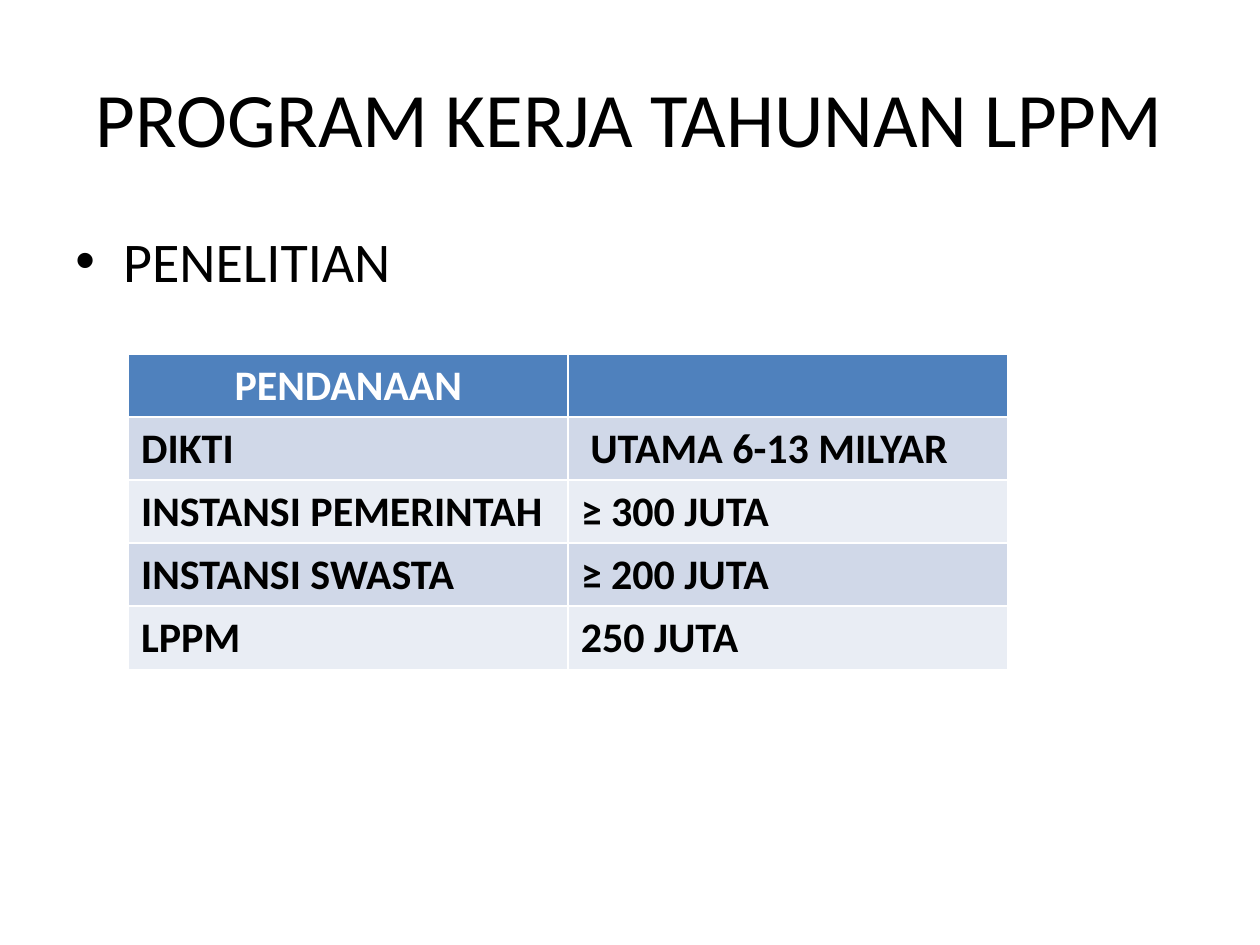
from dataclasses import dataclass

from lxml import etree
from pptx import Presentation
from pptx import util as u
from pptx.dml.color import RGBColor
from pptx.enum import text
from pptx.oxml import ns

BLACK = RGBColor(0x00, 0x00, 0x00)
WHITE = RGBColor(0xFF, 0xFF, 0xFF)
HEADER_BLUE = RGBColor(0x4F, 0x81, 0xBD)
BANDS = (RGBColor(0xD0, 0xD8, 0xE8), RGBColor(0xE9, 0xED, 0xF4))


@dataclass(frozen=True)
class Box:
    left: float
    top: float
    width: float
    height: float


@dataclass(frozen=True)
class Funding:
    source: str
    amount: str


TITLE_BOX = Box(0.5, 0.3, 9, 1.25)
BODY_BOX = Box(0.5, 1.75, 9, 4.95)
TABLE_BOX = Box(1.02, 2.81, 6.98, 2.5)

FUNDINGS = (
    Funding("PENDANAAN", ""),
    Funding("DIKTI", " UTAMA 6-13 MILYAR"),
    Funding("INSTANSI PEMERINTAH", "≥ 300 JUTA"),
    Funding("INSTANSI SWASTA", "≥ 200 JUTA"),
    Funding("LPPM", "250 JUTA"),
)


def lengths(box: Box) -> tuple:
    return tuple(u.Inches(v) for v in (box.left, box.top, box.width, box.height))


def write(tf, content: str, size: float, color: RGBColor, bold: bool = False,
          align=text.PP_ALIGN.LEFT):
    p = tf.paragraphs[0]
    p.alignment = align
    target = p.add_run() if content else p
    if content:
        target.text = content
    for name, value in {"name": "Calibri", "size": u.Pt(size), "bold": bold}.items():
        setattr(target.font, name, value)
    target.font.color.rgb = color
    return p


def add_title(s) -> None:
    sp = s.shapes.title
    for name, value in zip(("left", "top", "width", "height"), lengths(TITLE_BOX)):
        setattr(sp, name, value)
    sp.text_frame.vertical_anchor = text.MSO_ANCHOR.MIDDLE
    write(sp.text_frame, "PROGRAM KERJA TAHUNAN LPPM", 44, BLACK,
          align=text.PP_ALIGN.CENTER)


def add_body(s) -> None:
    tf = s.shapes.add_textbox(*lengths(BODY_BOX)).text_frame
    tf.word_wrap = True
    p = write(tf, "PENELITIAN", 32, BLACK)
    pPr = p._p.get_or_add_pPr()
    indent = u.Inches(0.38)
    pPr.set("marL", str(indent))
    pPr.set("indent", str(-indent))
    etree.SubElement(pPr, ns.qn("a:buFont")).set("typeface", "Arial")
    etree.SubElement(pPr, ns.qn("a:buChar")).set("char", "•")


def add_funding_table(s) -> None:
    table = s.shapes.add_table(len(FUNDINGS), 2, *lengths(TABLE_BOX)).table
    for row, funding in enumerate(FUNDINGS):
        header = row == 0
        for col, content in enumerate((funding.source, funding.amount)):
            cell = table.cell(row, col)
            cell.fill.solid()
            cell.fill.fore_color.rgb = HEADER_BLUE if header else BANDS[(row - 1) % 2]
            write(cell.text_frame, content, 24, WHITE if header else BLACK, True,
                  text.PP_ALIGN.CENTER if header else text.PP_ALIGN.LEFT)


def main() -> None:
    prs = Presentation()
    prs.slide_width, prs.slide_height = u.Inches(10), u.Inches(7.5)
    s = prs.slides.add_slide(prs.slide_layouts[5])
    add_title(s)
    add_body(s)
    add_funding_table(s)
    prs.save("out.pptx")


if __name__ == "__main__":
    main()
